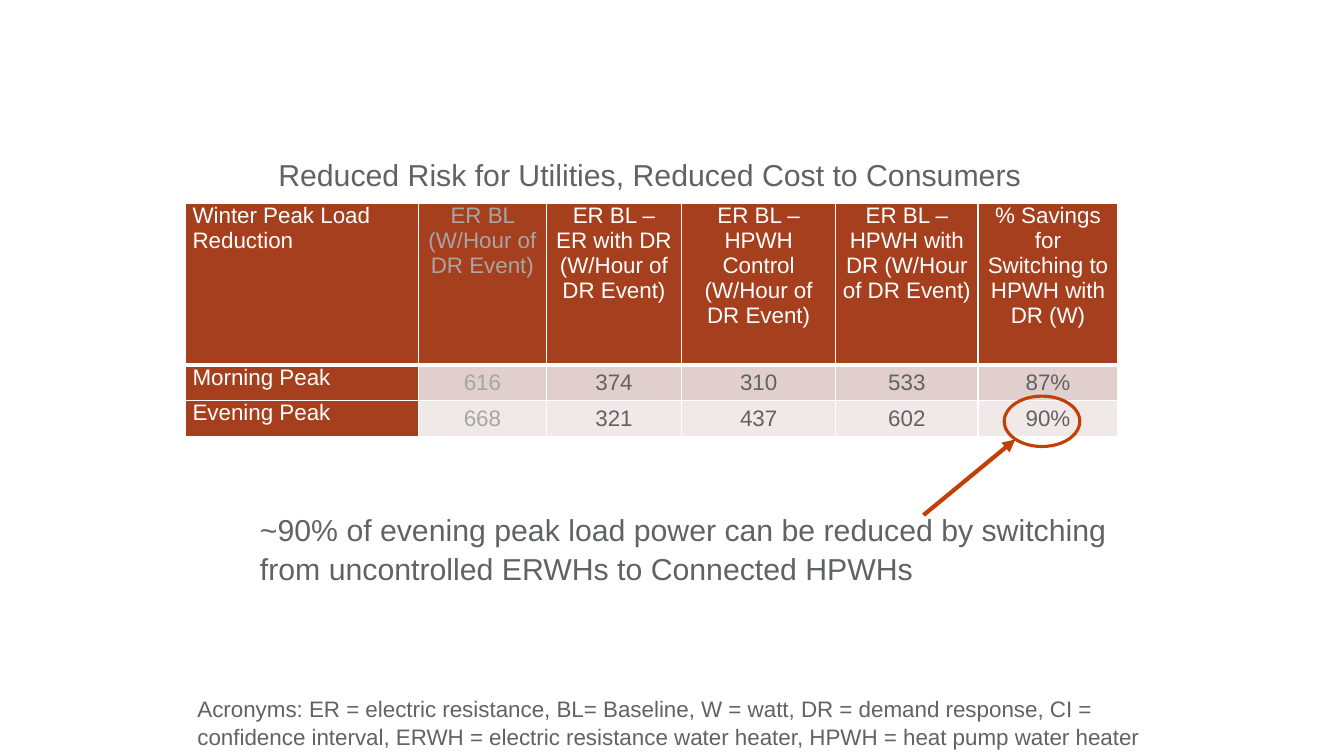
"""Build the slide on winter peak load reduction from connected water heaters."""
from lxml.etree import SubElement as Sub
from pptx import Presentation
from pptx.dml.color import RGBColor
from pptx.enum.shapes import MSO_CONNECTOR as Link, MSO_SHAPE as Shape
from pptx.enum.text import MSO_ANCHOR as Anchor, MSO_AUTO_SIZE as Fit, PP_ALIGN as Align
from pptx.oxml.ns import qn
from pptx.util import Inches, Pt

WHITE = RGBColor(0xFF, 0xFF, 0xFF)
GREY = RGBColor(0x61, 0x62, 0x65)
PALE = RGBColor(0xA6, 0xA6, 0xA6)
RUST = RGBColor(0xA6, 0x3F, 0x1E)
ROSE = RGBColor(0xE1, 0xCF, 0xCD)
BLUSH = RGBColor(0xF1, 0xE8, 0xE8)
ORANGE = RGBColor(0xC2, 0x40, 0x06)


def write(box, text, size):
    frame = box.text_frame
    frame.word_wrap = True
    frame.auto_size = Fit.NONE
    frame.vertical_anchor = Anchor.TOP
    frame.text = text
    para = frame.paragraphs[0]
    para.alignment = Align.LEFT
    para.line_spacing = 1.05
    font = para.runs[0].font
    font.name, font.size, font.color.rgb = "Arial", Pt(size), GREY


def edge(cell, side, width):
    line = Sub(cell._tc.get_or_add_tcPr(), qn(f"a:ln{side}"), w=str(Pt(width)))
    Sub(Sub(line, qn("a:solidFill")), qn("a:srgbClr"), val=str(WHITE))


deck = Presentation()
deck.slide_width, deck.slide_height = Inches(13.33), Inches(7.5)
slide = deck.slides.add_slide(deck.slide_layouts[5])
shapes = slide.shapes

title = shapes.title
title.left, title.top = Inches(2.66), Inches(1.48)
title.width, title.height = Inches(8.59), Inches(0.46)
write(title, "Reduced Risk for Utilities, Reduced Cost to Consumers", 21.6)

rows = [
    ["Winter\u00a0Peak Load Reduction", "ER BL (W/Hour of DR Event)",
     "ER BL –\nER with DR (W/Hour of DR Event)",
     "ER BL – HPWH Control (W/Hour of DR Event)",
     "ER BL –\nHPWH with DR (W/Hour of DR Event)",
     "% Savings for Switching to HPWH with DR (W)"],
    ["Morning Peak", "616", "374", "310", "533", "87%"],
    ["Evening Peak", "668", "321", "437", "602", "90%"],
]
widths = [2.31, 1.27, 1.34, 1.53, 1.41, 1.39]
heights = [1.6, 0.35, 0.36]
fills = [RUST, ROSE, BLUSH]

table = shapes.add_table(3, 6, Inches(1.84), Inches(2.02),
                         Inches(9.25), Inches(2.31)).table
for col, width in zip(table.columns, widths):
    col.width = Inches(width)
for r, row in enumerate(rows):
    table.rows[r].height = Inches(heights[r])
    for c, text in enumerate(row):
        cell = table.cell(r, c)
        head = r == 0 or c == 0
        for side in "LRTB":
            edge(cell, side, 3 if r == 0 and side == "B" else 1)
        cell.fill.solid()
        cell.fill.fore_color.rgb = RUST if head else fills[r]
        cell.margin_left = cell.margin_right = Inches(0.07)
        cell.margin_top = cell.margin_bottom = 0
        cell.vertical_anchor = Anchor.TOP if head else Anchor.MIDDLE
        cell.text_frame.text = text
        for para in cell.text_frame.paragraphs:
            para.alignment = Align.LEFT if c == 0 else Align.CENTER
            font = para.runs[0].font
            font.name, font.size, font.bold = "Arial", Pt(16), False
            font.color.rgb = PALE if c == 1 else WHITE if head else GREY

claim = shapes.add_textbox(Inches(2.48), Inches(5.01), Inches(8.98), Inches(1.19))
write(claim, "~90% of evening peak load power can be reduced by switching "
             "from uncontrolled ERWHs to Connected HPWHs", 21.6)

ring = shapes.add_shape(Shape.OVAL, Inches(9.96), Inches(3.93), Inches(0.75), Inches(0.5))
ring.shadow.inherit = False
ring.fill.background()
ring.line.color.rgb = ORANGE
ring.line.width = Pt(2.25)

arrow = shapes.add_connector(Link.STRAIGHT, Inches(9.16), Inches(5.11),
                             Inches(10.07), Inches(4.36))
arrow.line.color.rgb = ORANGE
arrow.line.width = Pt(3)
Sub(arrow.line._get_or_add_ln(), qn("a:tailEnd"), type="triangle")
Sub(arrow._element.spPr, qn("a:effectLst"))

note = shapes.add_textbox(Inches(1.86), Inches(6.83), Inches(9.6), Inches(0.64))
write(note, "Acronyms: ER = electric resistance, BL= Baseline, W = watt, "
            "DR = demand response, CI = confidence interval, "
            "ERWH = electric resistance water heater, HPWH = heat pump water heater", 16)

deck.save("out.pptx")
